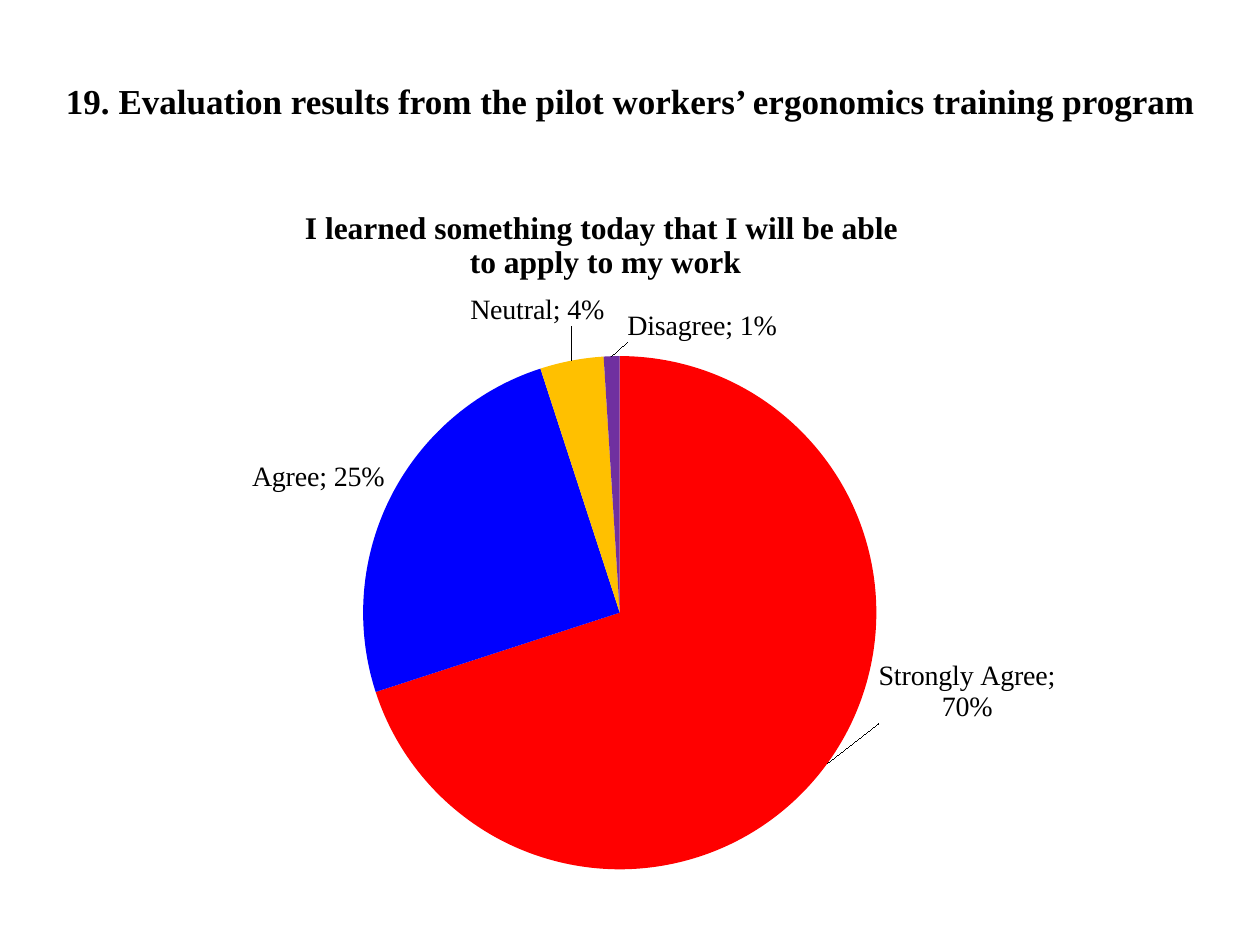
from lxml import etree
from pptx import Presentation, util as u
from pptx.chart.data import CategoryChartData
from pptx.dml.color import RGBColor
from pptx.enum import chart as charts, text
from pptx.oxml.ns import qn

WIDTH, HEIGHT = u.Inches(10), u.Inches(7.5)
SERIF = "Times New Roman"
RESPONSES = [
    ("Strongly Agree", 0.70, "FF0000", (0.04, -0.16)),
    ("Agree", 0.25, "0000FF", None),
    ("Neutral", 0.04, "FFC000", (0.03, -0.04)),
    ("Disagree", 0.01, "7030A0", (0.08, -0.01)),
]


def color(hex_value):
    """Turn a hex string into a colour."""
    return RGBColor.from_string(hex_value)


def format_font(font, size, bold=False, name=SERIF, fill="000000"):
    """Set the typeface, size, weight and colour of a font."""
    font.name, font.size, font.bold = name, u.Pt(size), bold
    font.color.rgb = color(fill)


def write_text(frame, lines, size, bold=False):
    """Write centred lines, one paragraph each."""
    for index, line in enumerate(lines):
        paragraph = frame.add_paragraph() if index else frame.paragraphs[0]
        paragraph.alignment = text.PP_ALIGN.CENTER
        run = paragraph.add_run()
        run.text = line
        format_font(run.font, size, bold)


def add_heading(slide, content, left, top, width, height):
    """Add the slide heading, placed by shares of the slide."""
    box = slide.shapes.add_textbox(
        int(WIDTH * left), int(HEIGHT * top), int(WIDTH * width), int(HEIGHT * height))
    box.text_frame.word_wrap = True
    box.text_frame.vertical_anchor = text.MSO_ANCHOR.MIDDLE
    write_text(box.text_frame, [content], 20, bold=True)


def make_layout(**settings):
    """Build a manual chart layout from its named settings."""
    layout = etree.Element(qn("c:layout"))
    manual = etree.SubElement(layout, qn("c:manualLayout"))
    for name, value in settings.items():
        etree.SubElement(manual, qn(f"c:{name}")).set("val", str(value))
    return layout


def place_plot(chart, x, y, w, h):
    """Fix the inner plot area by shares of the chart."""
    area = chart.element.find(".//" + qn("c:plotArea"))
    for layout in area.findall(qn("c:layout")):
        area.remove(layout)
    area.insert(0, make_layout(
        layoutTarget="inner", xMode="edge", yMode="edge", x=x, y=y, w=w, h=h))


def add_title(chart, lines, x, y):
    """Give the chart a title whose corner is set by shares of the chart."""
    chart.has_title = True
    write_text(chart.chart_title.text_frame, lines, 18, bold=True)
    title = chart.element.find(".//" + qn("c:title"))
    for layout in title.findall(qn("c:layout")):
        title.remove(layout)
    title.find(qn("c:tx")).addnext(make_layout(xMode="edge", yMode="edge", x=x, y=y))
    chart.chart_title.include_in_layout = False


def show_name_and_value(element):
    """Show category and value, parted by a semicolon."""
    for name in ("showVal", "showCatName"):
        element.find(qn(f"c:{name}")).set("val", "1")
    separator = etree.Element(qn("c:separator"))
    separator.text = "; "
    element.find(qn("c:showBubbleSize")).addnext(separator)


def style_slices(series):
    """Colour the slices and place their labels."""
    labels = series.data_labels
    labels.number_format, labels.number_format_is_linked = "0%", False
    labels.position = charts.XL_LABEL_POSITION.OUTSIDE_END
    format_font(labels.font, 16)
    group = series.format.line and series.points and labels._element
    show_name_and_value(group)
    for index, (_, _, fill, shift) in enumerate(RESPONSES):
        point = series.points[index]
        point.format.fill.solid()
        point.format.fill.fore_color.rgb = color(fill)
        point.format.line.fill.background()
        if shift:
            label = point.data_label
            format_font(label.font, 16)
            label.position = charts.XL_LABEL_POSITION.OUTSIDE_END
            element = group.findall(qn("c:dLbl"))[-1]
            element.insert(1, make_layout(x=shift[0], y=shift[1]))
            show_name_and_value(element)


def add_pie(slide, left, top, width, height):
    """Add the pie of responses, placed by shares of the slide."""
    data = CategoryChartData(number_format="0%")
    data.categories = [response[0] for response in RESPONSES]
    data.add_series("Series 1", [response[1] for response in RESPONSES])
    chart = slide.shapes.add_chart(
        charts.XL_CHART_TYPE.PIE, int(WIDTH * left), int(HEIGHT * top),
        int(WIDTH * width), int(HEIGHT * height), data).chart
    format_font(chart.font, 18, name="Calibri")
    chart.has_legend = False
    add_title(chart, ["I learned something today that I will be able ",
                      "to apply to my work"], x=0.21, y=0.01)
    place_plot(chart, x=0.264, y=0.235, w=0.454, h=0.765)
    style_slices(chart.plots[0].series[0])


def main():
    """Build and save the slide."""
    presentation = Presentation()
    presentation.slide_width, presentation.slide_height = WIDTH, HEIGHT
    slide = presentation.slides.add_slide(presentation.slide_layouts[6])
    add_heading(
        slide, "19. Evaluation results from the pilot workers’ ergonomics training program",
        0.038, 0.048, 0.925, 0.117)
    add_pie(slide, 0.05, 0.21, 0.9, 0.71)
    presentation.save("out.pptx")


if __name__ == "__main__":
    main()
